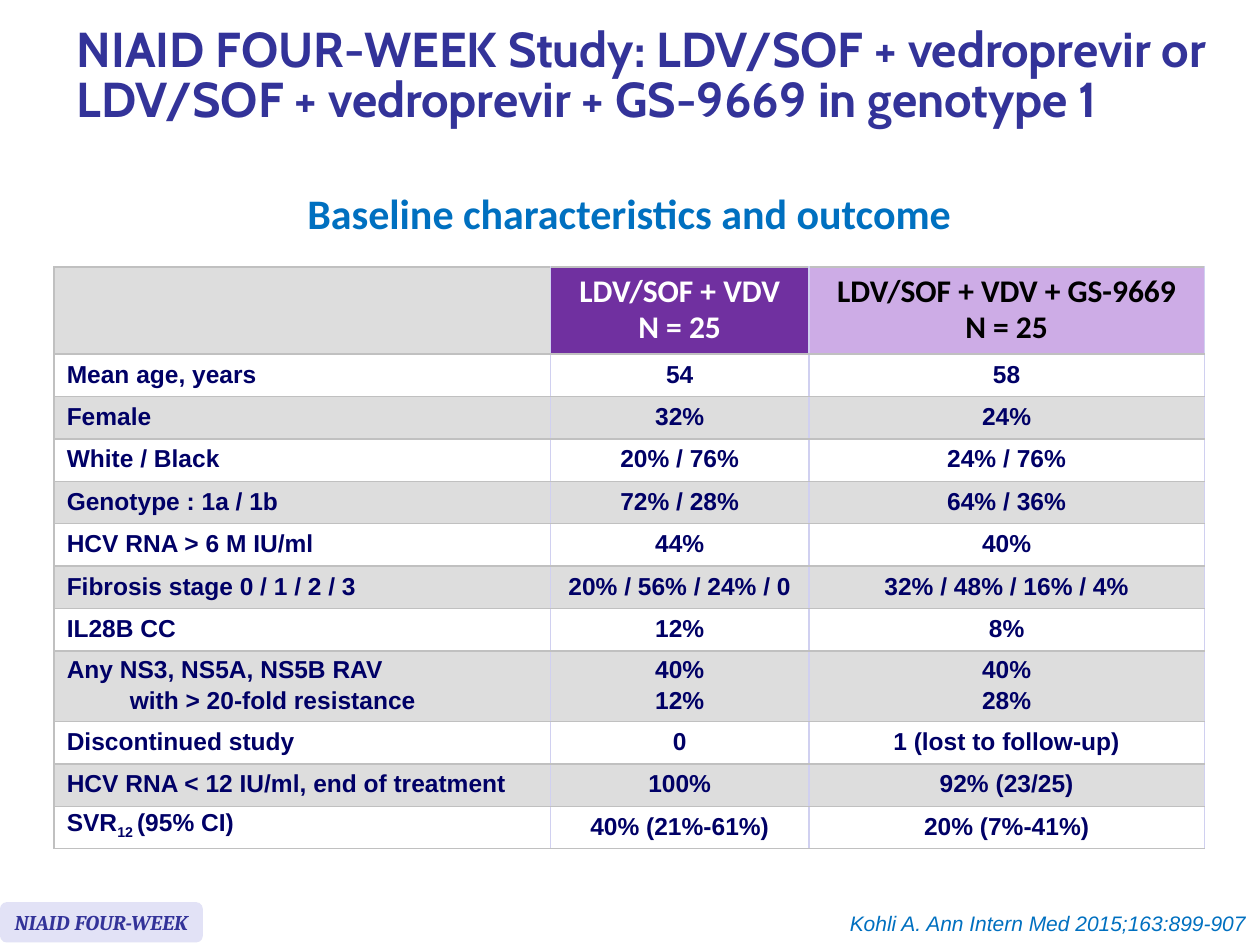
from lxml import etree
from pptx import Presentation
from pptx.dml.color import RGBColor
from pptx.enum.shapes import MSO_SHAPE
from pptx.enum.text import MSO_ANCHOR, PP_ALIGN
from pptx.oxml.ns import qn
from pptx.util import Inches, Pt

LEFT, CENTER, RIGHT = PP_ALIGN.LEFT, PP_ALIGN.CENTER, PP_ALIGN.RIGHT
MIDDLE, TOP = MSO_ANCHOR.MIDDLE, MSO_ANCHOR.TOP
ROUNDED = MSO_SHAPE.ROUNDED_RECTANGLE

INDIGO, BLUE, NAVY = "333399", "0070C0", "000066"
GREY, WHITE = "DDDDDD", "FFFFFF"
GREY_LINE, LILAC_LINE = "C0C0C0", "D0D0F0"

COLUMN_WIDTHS = [3.94, 2.05, 3.14]
HEADER_HEIGHT, DOUBLE_ROW_HEIGHT, TABLE_HEIGHT = 0.69, 0.56, 4.62

# heading, fill, text colour
ARMS = [
    ("", GREY, NAVY),
    ("LDV/SOF + VDV\nN = 25", "7030A0", WHITE),
    ("LDV/SOF + VDV + GS-9669\nN = 25", "CDACE6", "000000"),
]
CHARACTERISTICS = [
    ("Mean age, years", "54", "58"),
    ("Female", "32%", "24%"),
    ("White / Black", "20% / 76%", "24% / 76%"),
    ("Genotype : 1a / 1b", "72% / 28%", "64% / 36%"),
    ("HCV RNA > 6 M IU/ml", "44%", "40%"),
    ("Fibrosis stage 0 / 1 / 2 / 3", "20% / 56% / 24% / 0", "32% / 48% / 16% / 4%"),
    ("IL28B CC", "12%", "8%"),
    ("Any NS3, NS5A, NS5B RAV\nwith > 20-fold resistance", "40%\n12%", "40%\n28%"),
    ("Discontinued study", "0", "1 (lost to follow-up)"),
    ("HCV RNA < 12 IU/ml, end of treatment", "100%", "92% (23/25)"),
    (("SVR", "12 ", "(95% CI)"), "40% (21%-61%)", "20% (7%-41%)"),
]


def rgb(color):
    return RGBColor.from_string(color)


def set_font(paragraph, name, size, color, bold=False, italic=False):
    font = paragraph.font
    font.name, font.size = name, Pt(size)
    font.bold, font.italic = bold, italic
    font.color.rgb = rgb(color)


def add_text(slide, text, box, font, align=LEFT, anchor=TOP, wrap=False, spacing=None):
    left, top, width, height = map(Inches, box)
    frame = slide.shapes.add_textbox(left, top, width, height).text_frame
    frame.word_wrap = wrap
    frame.vertical_anchor = anchor
    paragraph = frame.paragraphs[0]
    paragraph.text = text
    paragraph.alignment = align
    paragraph.line_spacing = spacing
    set_font(paragraph, *font)


def add_study_tag(slide, text):
    tag = slide.shapes.add_shape(
        ROUNDED, Inches(0), Inches(7.16), Inches(1.61), Inches(0.32))
    tag.shadow.inherit = False
    tag.fill.solid()
    tag.fill.fore_color.rgb = rgb("E2E2F6")
    tag.line.fill.background()
    frame = tag.text_frame
    frame.word_wrap = False
    frame.vertical_anchor = MIDDLE
    paragraph = frame.paragraphs[0]
    paragraph.text = text
    paragraph.alignment = CENTER
    set_font(paragraph, "Cambria", 12, INDIGO, True, True)


def set_borders(cell, left):
    """Grey rules above and below, lilac at the sides except the given left."""
    properties = cell._tc.get_or_add_tcPr()
    sides = {"lnL": left, "lnR": LILAC_LINE, "lnT": GREY_LINE, "lnB": GREY_LINE}
    for side, color in sides.items():
        line = etree.SubElement(properties, qn(f"a:{side}"), w=str(Pt(1)))
        fill = etree.SubElement(line, qn("a:solidFill"))
        etree.SubElement(fill, qn("a:srgbClr"), val=color)


def style_cell(cell, fill, column):
    set_borders(cell, LILAC_LINE if column else GREY_LINE)
    cell.fill.solid()
    cell.fill.fore_color.rgb = rgb(fill)
    cell.vertical_anchor = MIDDLE


def write_subscripted(paragraph, parts):
    """Write base, subscript and remainder as three runs."""
    for part in parts:
        paragraph.add_run().text = part
    paragraph.runs[1]._r.get_or_add_rPr().set("baseline", "-25000")


def fill_header_cell(cell, column):
    heading, fill, color = ARMS[column]
    style_cell(cell, fill, column)
    cell.text = heading
    for paragraph in cell.text_frame.paragraphs:
        paragraph.alignment = CENTER
        paragraph.line_spacing = Pt(21)
        set_font(paragraph, "Calibri", 18, color, True)


def fill_body_cell(cell, content, row, column):
    style_cell(cell, WHITE if row % 2 else GREY, column)
    if isinstance(content, tuple):
        write_subscripted(cell.text_frame.paragraphs[0], content)
    else:
        cell.text = content
    for index, paragraph in enumerate(cell.text_frame.paragraphs):
        paragraph.alignment = CENTER if column else LEFT
        paragraph.line_spacing = Pt(15)
        if index:
            paragraph.space_before = Pt(2.8)
            if column == 0:
                paragraph._p.get_or_add_pPr().set("marL", str(Inches(0.5)))
        set_font(paragraph, "Arial", 14, NAVY, True)


def add_outcome_table(slide):
    table = slide.shapes.add_table(
        len(CHARACTERISTICS) + 1, len(ARMS), Inches(0.43), Inches(2.12),
        Inches(sum(COLUMN_WIDTHS)), Inches(TABLE_HEIGHT)).table
    table.first_row = table.horz_banding = False
    for column, width in enumerate(COLUMN_WIDTHS):
        table.columns[column].width = Inches(width)
        fill_header_cell(table.cell(0, column), column)

    single_height = ((TABLE_HEIGHT - HEADER_HEIGHT - DOUBLE_ROW_HEIGHT)
                     / (len(CHARACTERISTICS) - 1))
    table.rows[0].height = Inches(HEADER_HEIGHT)
    for row, contents in enumerate(CHARACTERISTICS, start=1):
        is_double = "\n" in contents[0]
        table.rows[row].height = Inches(DOUBLE_ROW_HEIGHT if is_double else single_height)
        for column, content in enumerate(contents):
            fill_body_cell(table.cell(row, column), content, row, column)


def main():
    presentation = Presentation()
    presentation.slide_width, presentation.slide_height = Inches(10), Inches(7.5)
    slide = presentation.slides.add_slide(presentation.slide_layouts[6])

    add_text(slide, "NIAID FOUR-WEEK Study: LDV/SOF + vedroprevir or "
             "LDV/SOF + vedroprevir + GS-9669 in genotype 1",
             (0.51, 0.08, 9.49, 1.07), ("Cabin", 28, INDIGO, True),
             anchor=MIDDLE, wrap=True, spacing=0.85)
    add_outcome_table(slide)
    add_text(slide, "Baseline characteristics and outcome",
             (2.31, 1.51, 5.37, 0.44), ("Calibri", 24, BLUE, True),
             align=CENTER, spacing=Pt(23.6))
    add_study_tag(slide, "NIAID FOUR-WEEK")
    add_text(slide, "Kohli A. Ann Intern Med 2015;163:899-907",
             (6.62, 7.18, 3.37, 0.3), ("Arial", 12, BLUE, False, True), align=RIGHT)

    presentation.save("out.pptx")


if __name__ == "__main__":
    main()
